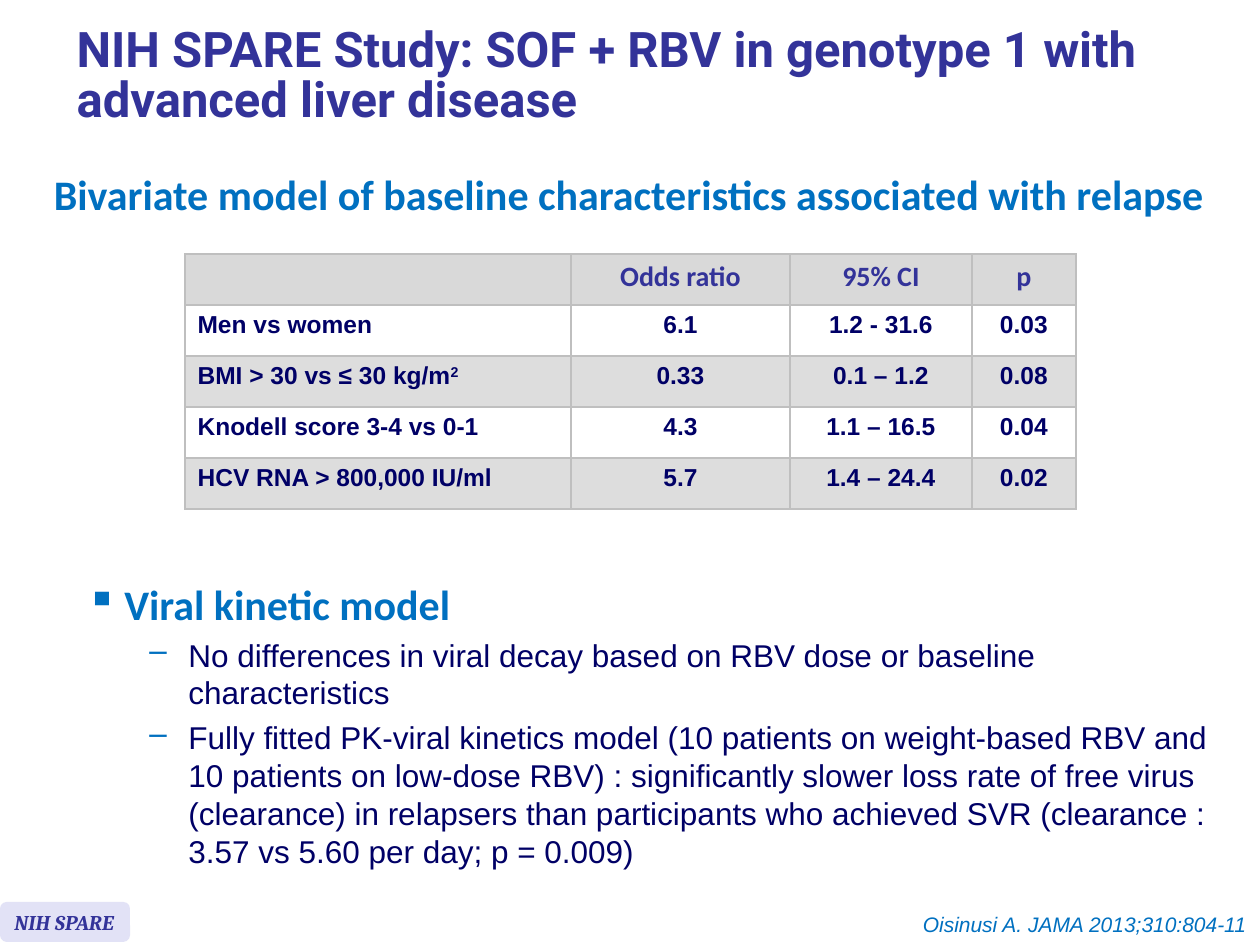
"""Build the NIH SPARE slide on baseline characteristics and viral kinetics."""
import lxml.etree
import pptx
import pptx.dml.color
import pptx.enum.shapes
import pptx.enum.text
import pptx.oxml
import pptx.oxml.ns
import pptx.util

RGB = pptx.dml.color.RGBColor.from_string
ALIGN = pptx.enum.text.PP_ALIGN
ANCHOR = pptx.enum.text.MSO_ANCHOR
AUTO = pptx.enum.text.MSO_AUTO_SIZE
THEME = {
    "colours": {"indigo": "333399", "blue": "0070C0", "navy": "000066", "badge": "E2E2F6",
                "border": "BFBFBF", "header": "D9D9D9", "bands": ("FFFFFF", "DDDDDD")},
    "title": {"name": "Roboto", "size": 28, "bold": True, "italic": False, "color": "333399"},
    "heading": {"name": "Calibri", "size": 24, "bold": True, "italic": False, "color": "0070C0"},
    "column": {"name": "Calibri", "size": 16, "bold": True, "italic": False, "color": "333399"},
    "cell": {"name": "Arial", "size": 14, "bold": True, "italic": False, "color": "000066"},
    "detail": {"name": "Arial", "size": 18, "bold": False, "italic": False, "color": "000066"},
    "badge": {"name": "Cambria", "size": 12, "bold": True, "italic": True, "color": "333399"},
    "citation": {"name": "Arial", "size": 12, "bold": False, "italic": True, "color": "0070C0"},
}
COLOURS = THEME["colours"]


def px(*lengths):
    return [pptx.util.Emu(round(length * 914400 / 126)) for length in lengths]


def write(para, text, look, **layout):
    for name, value in layout.items():
        setattr(para, name, value)
    span = para.add_run()
    span.text = text
    for name, value in THEME[look].items():
        if name == "color":
            span.font.color.rgb = RGB(value)
        else:
            setattr(span.font, name, pptx.util.Pt(value) if name == "size" else value)
    return span


deck = pptx.Presentation()
deck.slide_width, deck.slide_height = px(1260, 945)
page = deck.slides.add_slide(deck.slide_layouts[5])

title = page.shapes.title
title.left, title.top, title.width, title.height = px(64, 10, 1150, 135)
title.text_frame.auto_size = AUTO.NONE
title.text_frame.vertical_anchor = ANCHOR.MIDDLE
write(title.text_frame.paragraphs[0],
      "NIH SPARE Study: SOF + RBV in genotype 1 with advanced liver disease",
      "title", alignment=ALIGN.LEFT, line_spacing=0.85)

rows = [
    ("", "Odds ratio", "95% CI", "p"),
    ("Men vs women", "6.1", "1.2 - 31.6", "0.03"),
    ("BMI > 30 vs ≤ 30 kg/m", "0.33", "0.1 – 1.2", "0.08"),
    ("Knodell score 3-4 vs 0-1", "4.3", "1.1 – 16.5", "0.04"),
    ("HCV RNA > 800,000 IU/ml", "5.7", "1.4 – 24.4", "0.02"),
]
widths = (386, 219, 182, 104)
row_height = 51
table = page.shapes.add_table(
    len(rows), len(widths), *px(185, 254, sum(widths), row_height * len(rows))).table
table.first_row = table.horz_banding = False
for column, width in zip(table.columns, px(*widths)):
    column.width = width
for row_index, row in enumerate(rows):
    table.rows[row_index].height = px(row_height)[0]
    fill = COLOURS["bands"][(row_index - 1) % 2] if row_index else COLOURS["header"]
    for column_index, text in enumerate(row):
        cell = table.cell(row_index, column_index)
        properties = cell._tc.get_or_add_tcPr()
        for side in ("lnL", "lnR", "lnT", "lnB"):
            properties.append(pptx.oxml.parse_xml(
                f'<a:{side} {pptx.oxml.ns.nsdecls("a")} w="12700"><a:solidFill>'
                f'<a:srgbClr val="{COLOURS["border"]}"/></a:solidFill></a:{side}>'))
        cell.fill.solid()
        cell.fill.fore_color.rgb = RGB(fill)
        para = cell.text_frame.paragraphs[0]
        if text:
            write(para, text, "cell" if row_index else "column",
                  alignment=ALIGN.CENTER if column_index else ALIGN.LEFT)
        if text.endswith("kg/m"):
            write(para, "2", "cell")._r.get_or_add_rPr().set("baseline", "30000")

badge = page.shapes.add_shape(
    pptx.enum.shapes.MSO_SHAPE.ROUNDED_RECTANGLE, *px(0, 902, 130, 40))
badge.shadow.inherit = False
badge.fill.solid()
badge.fill.fore_color.rgb = RGB(COLOURS["badge"])
badge.line.fill.background()
badge.text_frame.word_wrap = False
badge.text_frame.vertical_anchor = ANCHOR.MIDDLE
write(badge.text_frame.paragraphs[0], "NIH SPARE", "badge", alignment=ALIGN.LEFT)

labels = [
    ((896, 905, 363, 38), "Oisinusi A. JAMA 2013;310:804-11", "citation",
     {"alignment": ALIGN.RIGHT}),
    ((35, 171, 1188, 55), "Bivariate model of baseline characteristics associated with relapse",
     "heading", {"alignment": ALIGN.CENTER, "line_spacing": pptx.util.Pt(23.6)}),
]
for place, text, look, layout in labels:
    box = page.shapes.add_textbox(*px(*place))
    box.text_frame.word_wrap = False
    box.text_frame.auto_size = AUTO.SHAPE_TO_FIT_TEXT
    write(box.text_frame.paragraphs[0], text, look, **layout)

points = [
    (0, "Viral kinetic model"),
    (1, "No differences in viral decay based on RBV dose or baseline characteristics"),
    (1, "Fully fitted PK-viral kinetics model (10 patients on weight-based RBV and 10 patients "
        "on low-dose RBV) : significantly slower loss rate of free virus (clearance) in relapsers "
        "than participants who achieved SVR (clearance : 3.57 vs 5.60 per day; p = 0.009)"),
]
levels = [("▪", 38, 38, "heading"), ("–", 102, 39, "detail")]
frame = page.shapes.add_textbox(*px(74, 572, 1171, 338)).text_frame
frame.word_wrap = True
for index, (level, text) in enumerate(points):
    bullet, margin, hanging, look = levels[level]
    para = frame.add_paragraph() if index else frame.paragraphs[0]
    properties = para._p.get_or_add_pPr()
    for name, value in zip(("marL", "indent"), px(margin, -hanging)):
        properties.set(name, str(value))
    colour = lxml.etree.SubElement(properties, pptx.oxml.ns.qn("a:buClr"))
    lxml.etree.SubElement(colour, pptx.oxml.ns.qn("a:srgbClr"), val=COLOURS["blue"])
    lxml.etree.SubElement(properties, pptx.oxml.ns.qn("a:buChar"), char=bullet)
    write(para, text, look, level=level, space_before=pptx.util.Pt(4 if index else 0))

deck.save("out.pptx")
